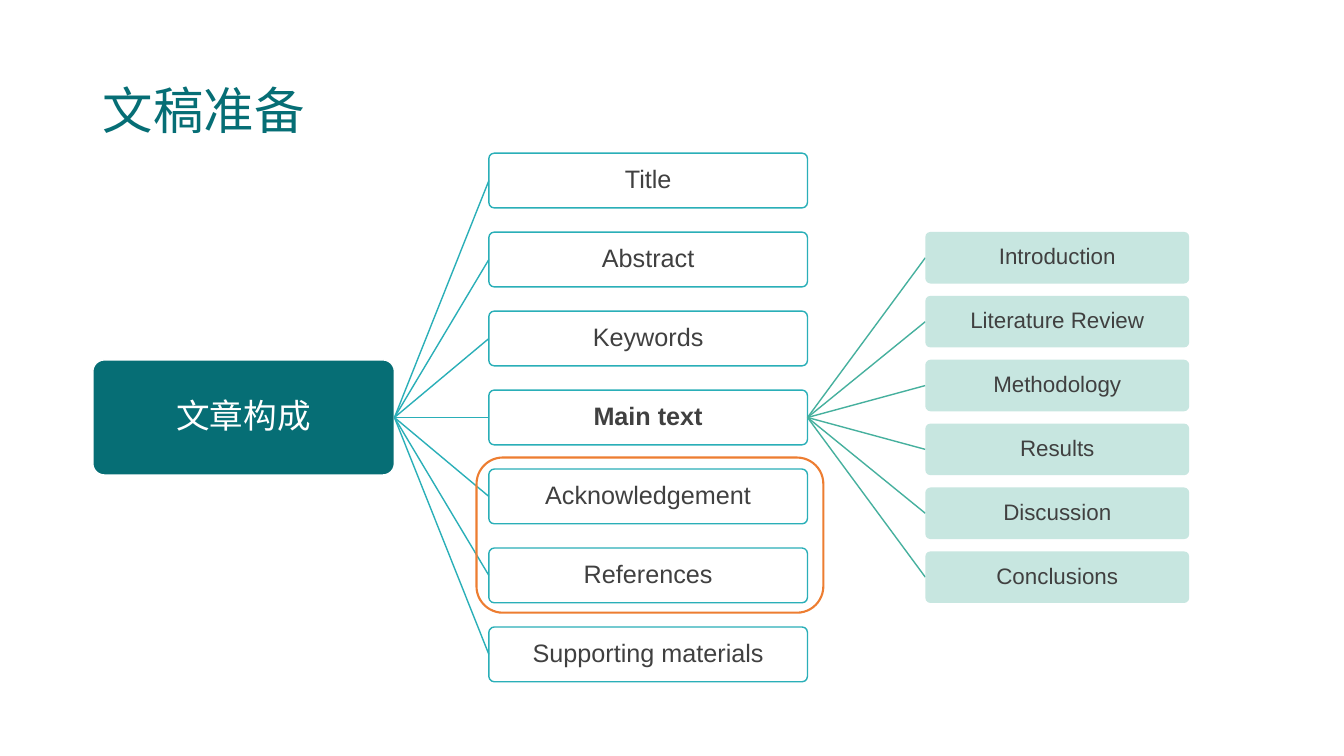
import lxml.etree
import pptx
import pptx.dml.color
import pptx.enum.shapes
import pptx.enum.text
import pptx.oxml.ns
import pptx.util

Cm = pptx.util.Cm
Pt = pptx.util.Pt
qn = pptx.oxml.ns.qn
ALIGN = pptx.enum.text.PP_ALIGN
MIDDLE = pptx.enum.text.MSO_ANCHOR.MIDDLE

CJK_FONT = "Noto Sans CJK SC"
COLORS = {
    "deep": "066E75",
    "teal": "2AAFB8",
    "green": "46B09E",
    "mint": "C7E6E0",
    "orange": "ED7D31",
    "text": "404040",
    "white": "FFFFFF",
}

# Box looks: colours, outline width and font values of each level
ROOT = {"fill": "deep", "line": "white", "color": "white",
        "font": {"size": Pt(24), "name": CJK_FONT}}
SECTION = {"line": "teal", "color": "text",
           "font": {"size": Pt(18), "name": "Arial"}}
PART = {"fill": "mint", "color": "text",
        "font": {"size": Pt(16), "name": "Arial"}}
FRAME = {"line": "orange", "width": 1.5, "corner": 0.17}

SECTIONS = ["Title", "Abstract", "Keywords", "Main text",
            "Acknowledgement", "References", "Supporting materials"]
PARTS = ["Introduction", "Literature Review", "Methodology",
         "Results", "Discussion", "Conclusions"]

# Tree geometry in centimetres; every level is centred on AXIS
AXIS = 10.52
ROOT_LEFT, ROOT_WIDTH, ROOT_HEIGHT = 2.34, 7.6, 2.9
SECTION_LEFT, SECTION_WIDTH, SECTION_HEIGHT, SECTION_PITCH = 12.32, 8.03, 1.38, 1.99
PART_LEFT, PART_WIDTH, PART_HEIGHT, PART_PITCH = 23.32, 6.65, 1.3, 1.61


def rgb(key):
    return pptx.dml.color.RGBColor.from_string(COLORS[key])


def apply(target, values):
    for attribute, value in values.items():
        setattr(target, attribute, value)


def write(frame, text, color, font_values, align):
    apply(frame, {"word_wrap": True, "vertical_anchor": MIDDLE,
                  "auto_size": pptx.enum.text.MSO_AUTO_SIZE.NONE})
    paragraph = frame.paragraphs[0]
    apply(paragraph, {"alignment": align, "line_spacing": 0.9})
    run = paragraph.add_run()
    run.text = text
    apply(run.font, font_values)
    run.font.color.rgb = rgb(color)
    east_asian = lxml.etree.SubElement(run.font._element, qn("a:ea"))
    east_asian.set("typeface", CJK_FONT)


def add_box(slide, left, top, width, height, look, text="", bold=False):
    box = slide.shapes.add_shape(
        pptx.enum.shapes.MSO_SHAPE.ROUNDED_RECTANGLE,
        Cm(left), Cm(top), Cm(width), Cm(height))
    box.shadow.inherit = False
    box.adjustments[0] = look.get("corner", 0.1)
    if "fill" in look:
        box.fill.solid()
        box.fill.fore_color.rgb = rgb(look["fill"])
    else:
        box.fill.background()
    if "line" in look:
        box.line.color.rgb = rgb(look["line"])
        box.line.width = Pt(look.get("width", 1))
    else:
        box.line.fill.background()
    if text:
        margins = ("margin_left", "margin_top", "margin_right", "margin_bottom")
        apply(box.text_frame, dict.fromkeys(margins, Cm(0.04)))
        write(box.text_frame, text, look["color"],
              {**look["font"], "bold": bold}, ALIGN.CENTER)


def add_branch(slide, start_x, end_x, end_y, color):
    branch = slide.shapes.add_connector(
        pptx.enum.shapes.MSO_CONNECTOR.STRAIGHT,
        Cm(start_x), Cm(AXIS), Cm(end_x), Cm(end_y))
    branch.line.color.rgb = rgb(color)
    branch.line.width = Pt(1)
    lxml.etree.SubElement(branch._element.spPr, qn("a:effectLst"))


def add_level(slide, labels, parent_right, left, width, height, pitch,
              look, branch_color, strong=None):
    for index, label in enumerate(labels):
        center = AXIS + (index - (len(labels) - 1) / 2) * pitch
        add_branch(slide, parent_right, left, center, branch_color)
        add_box(slide, left, center - height / 2, width, height,
                look, label, label == strong)


def add_title(slide, text):
    title = slide.shapes.title
    apply(title, {"left": Cm(2.34), "top": Cm(1.02),
                  "width": Cm(29.21), "height": Cm(3.68)})
    write(title.text_frame, text, "deep",
          {"size": Pt(36), "name": "Arial"}, ALIGN.LEFT)


def main():
    deck = pptx.Presentation()
    apply(deck, {"slide_width": Cm(33.87), "slide_height": Cm(19.05)})
    slide = deck.slides.add_slide(deck.slide_layouts[5])
    add_title(slide, "文稿准备")

    # Article tree: root, sections, parts of the main text
    add_box(slide, ROOT_LEFT, AXIS - ROOT_HEIGHT / 2, ROOT_WIDTH, ROOT_HEIGHT,
            ROOT, "文章构成")
    add_level(slide, SECTIONS, ROOT_LEFT + ROOT_WIDTH, SECTION_LEFT,
              SECTION_WIDTH, SECTION_HEIGHT, SECTION_PITCH,
              SECTION, "teal", strong="Main text")
    add_level(slide, PARTS, SECTION_LEFT + SECTION_WIDTH, PART_LEFT,
              PART_WIDTH, PART_HEIGHT, PART_PITCH, PART, "green")

    # Frame around acknowledgement and references
    add_box(slide, 12.01, 11.53, 8.74, 3.91, FRAME)

    deck.save("out.pptx")


if __name__ == "__main__":
    main()
